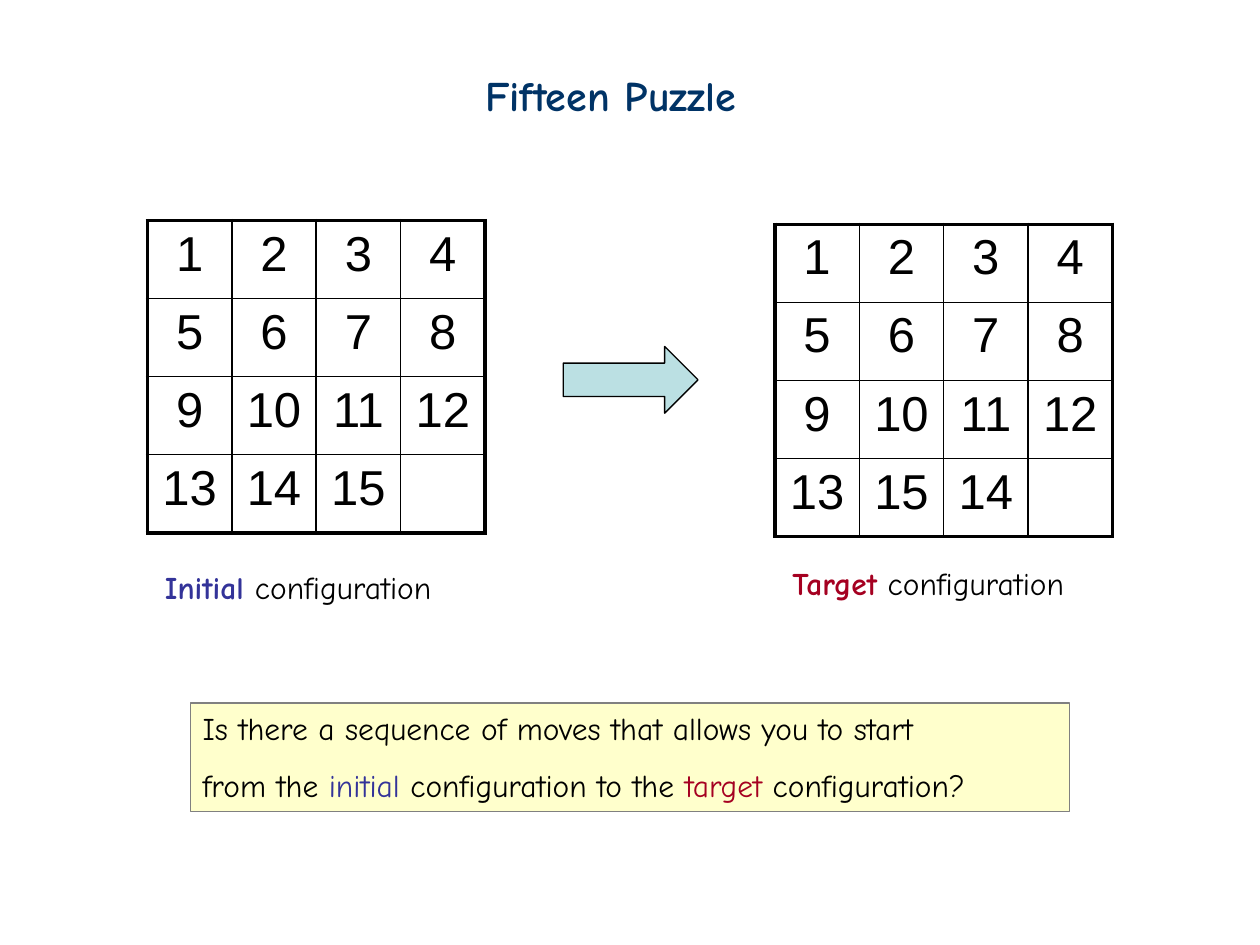
from lxml import etree
from pptx import Presentation
from pptx.dml.color import RGBColor
from pptx.enum.shapes import MSO_SHAPE
from pptx.enum.text import MSO_ANCHOR, MSO_AUTO_SIZE, PP_ALIGN
from pptx.oxml.ns import qn
from pptx.util import Inches, Pt

ARROW, RECT = MSO_SHAPE.RIGHT_ARROW, MSO_SHAPE.RECTANGLE
TOP, GROW = MSO_ANCHOR.TOP, MSO_AUTO_SIZE.SHAPE_TO_FIT_TEXT
LEFT, CENTER = PP_ALIGN.LEFT, PP_ALIGN.CENTER
COLORS = {
    "title": "003366", "ink": "000000", "initial": "333399",
    "target": "A50021", "arrow": "BBE0E3", "note": "FFFFCC", "edge": "808080",
}
HAND, PLAIN = "Comic Neue", "Arial"
SIDE = 4
CELL_W, CELL_H = 0.67, 0.62
THICK, THIN = 2.25, 1


def rgb(name):
    return RGBColor.from_string(COLORS[name])


def box(*lengths):
    return [Inches(x) for x in lengths]


def style(run, size, color="ink", bold=False, face=HAND):
    font = run.font
    font.name, font.size, font.bold = face, Pt(size), bold
    font.color.rgb = rgb(color)


def write(frame, lines, size=18, wrap=False):
    """Fill a frame with lines, each a list of (text, color, bold)."""
    frame.word_wrap, frame.auto_size = wrap, GROW
    frame.vertical_anchor = TOP
    for i, line in enumerate(lines):
        para = frame.add_paragraph() if i else frame.paragraphs[0]
        para.alignment = LEFT
        for text, color, bold in line:
            run = para.add_run()
            run.text = text
            style(run, size, color, bold)


def add_title(slide, text):
    title = slide.shapes.title
    title.left, title.top, title.width, title.height = box(3.75, 0.5, 2.5, 0.5)
    write(title.text_frame, [[(text, "title", True)]], 24)


def add_label(slide, area, parts):
    label = slide.shapes.add_textbox(*box(*area))
    write(label.text_frame, [parts])


def add_form(slide, kind, area, fill, line):
    form = slide.shapes.add_shape(kind, *box(*area))
    form.shadow.inherit = False
    form.fill.solid()
    form.fill.fore_color.rgb = rgb(fill)
    form.line.color.rgb = rgb(line)
    form.line.width = Pt(0.75)
    return form


def set_edges(cell, row, col):
    """Thick lines around the board, thin ones inside."""
    last = SIDE - 1
    outer = {"L": col == 0, "R": col == last, "T": row == 0, "B": row == last}
    props = cell._tc.get_or_add_tcPr()
    for side, thick in outer.items():
        width = str(Pt(THICK if thick else THIN))
        line = etree.SubElement(props, qn("a:ln" + side), w=width)
        fill = etree.SubElement(line, qn("a:solidFill"))
        etree.SubElement(fill, qn("a:srgbClr"), val=COLORS["ink"])
    cell.fill.background()


def add_board(slide, left, top, tiles):
    area = box(left, top, SIDE * CELL_W, SIDE * CELL_H)
    table = slide.shapes.add_table(SIDE, SIDE, *area).table
    table.first_row = table.horz_banding = False
    for i in range(SIDE):
        table.columns[i].width = Inches(CELL_W)
        table.rows[i].height = Inches(CELL_H)
    for i in range(SIDE * SIDE):
        row, col = divmod(i, SIDE)
        cell = table.cell(row, col)
        set_edges(cell, row, col)
        para = cell.text_frame.paragraphs[0]
        para.alignment = CENTER
        if i < len(tiles):
            para.text = str(tiles[i])
            style(para.runs[0], 28, face=PLAIN)


def main():
    deck = Presentation()
    deck.slide_width, deck.slide_height = box(10, 7.5)
    slide = deck.slides.add_slide(deck.slide_layouts[5])
    add_title(slide, "Fifteen Puzzle")

    # Boards, with the last two tiles swapped in the target
    add_board(slide, 1.17, 1.75, [*range(1, 16)])
    add_board(slide, 6.15, 1.78, [*range(1, 14), 15, 14])
    add_form(slide, ARROW, (4.47, 2.75, 1.07, 0.53), "arrow", "ink")

    # Captions
    add_label(slide, (1.21, 4.46, 2.59, 0.4),
              [("Initial ", "initial", True), ("configuration", "ink", False)])
    add_label(slide, (6.19, 4.43, 2.65, 0.4),
              [("Target", "target", True), (" configuration", "ink", False)])

    # Question
    note = add_form(slide, RECT, (1.51, 5.58, 6.98, 0.86), "note", "edge")
    first = "Is there a sequence of moves that allows you to start"
    write(note.text_frame, [
        [(first, "ink", False)],
        [("from the ", "ink", False), ("initial", "initial", False),
         (" configuration to the ", "ink", False),
         ("target", "target", False), (" configuration?", "ink", False)],
    ], wrap=True)
    note.text_frame.paragraphs[1].line_spacing = 1.5

    deck.save("out.pptx")


if __name__ == "__main__":
    main()
